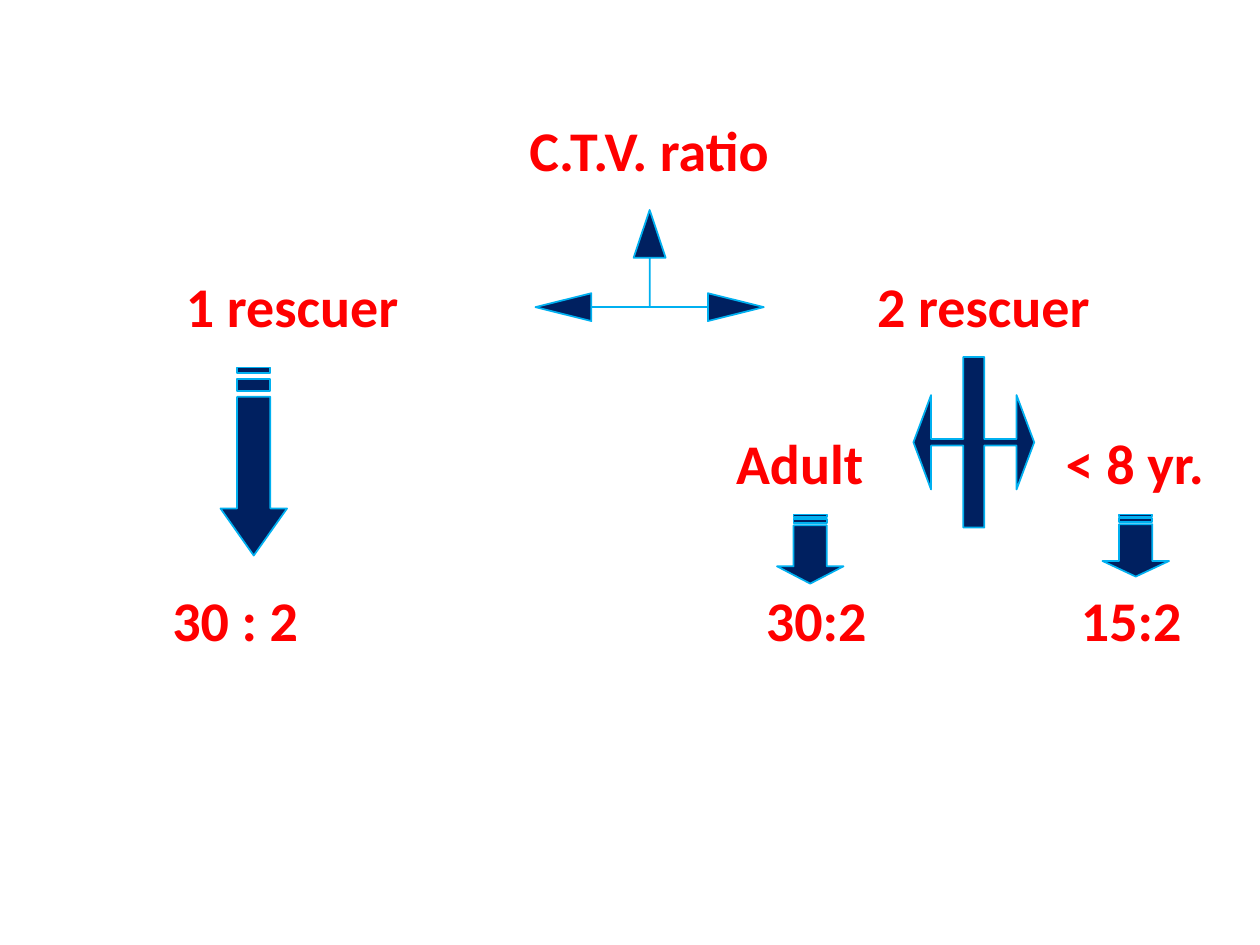
import pptx
import pptx.dml.color
import pptx.enum.shapes
import pptx.enum.text
import pptx.util

Pt = pptx.util.Pt
COLORS = {"text": "FF0000", "fill": "002060", "line": "00B0F0"}
LABEL_FORMAT = {"name": "Calibri", "size": Pt(32), "bold": True}
FIRST_ROW, ROW_PITCH = 85, 89.5
LABEL_HEIGHT = 40

# Each row holds (text, centre, width).
LABEL_ROWS = [
    [("C.T.V. ratio", 371, 180)],
    [("1 rescuer", 167, 160), ("2 rescuer", 562, 160)],
    [("Adult", 457, 100), ("< 8 yr.", 648.5, 100)],
    [("30 : 2", 134.5, 100), ("30:2", 466.5, 80), ("15:2", 646.5, 80)],
]
DOWN_ARROWS = [(126, 210, 38, 107.5), (444, 294, 38, 39.5), (630, 294, 38, 35.5)]


def color(name):
    return pptx.dml.color.RGBColor.from_string(COLORS[name])


def paint(shape):
    shape.shadow.inherit = False
    shape.fill.solid()
    shape.fill.fore_color.rgb = color("fill")
    shape.line.color.rgb = color("line")
    shape.line.width = Pt(1)


def add_label(page, text, center, middle, width):
    box = page.shapes.add_textbox(Pt(center - width / 2), Pt(middle - LABEL_HEIGHT / 2),
                                  Pt(width), Pt(LABEL_HEIGHT))
    frame = box.text_frame
    frame_format = {"margin_left": 0, "margin_right": 0, "margin_top": 0,
                    "margin_bottom": 0, "word_wrap": True,
                    "vertical_anchor": pptx.enum.text.MSO_ANCHOR.MIDDLE}
    for name, value in frame_format.items():
        setattr(frame, name, value)
    para = frame.paragraphs[0]
    para.alignment = pptx.enum.text.PP_ALIGN.CENTER
    span = para.add_run()
    span.text = text
    for name, value in LABEL_FORMAT.items():
        setattr(span.font, name, value)
    span.font.color.rgb = color("text")


def add_outline(page, contours):
    """Draw closed contours, given as lists of points, as one shape."""
    contours = [[(Pt(x), Pt(y)) for x, y in contour] for contour in contours]
    builder = page.shapes.build_freeform(*contours[0][0])
    for number, contour in enumerate(contours):
        if number:
            builder.move_to(*contour[0])
        builder.add_line_segments(contour[1:], close=True)
    paint(builder.convert_to_shape())


def add_striped_arrow(page, left, top, width, height):
    """Draw a down arrow with two stripes; stripes are 32nds of its height."""
    inner, outer = left + width / 4, left + width * 3 / 4
    neck, tip = top + height * 3 / 4, top + height
    body = top + height * 5 / 32
    contours = [[(left + width, neck), (outer, neck), (outer, body), (inner, body),
                 (inner, neck), (left, neck), (left + width / 2, tip)]]
    for start, end in [(2, 4), (0, 1)]:
        upper, lower = top + height * start / 32, top + height * end / 32
        contours.append([(outer, upper), (inner, upper), (inner, lower), (outer, lower)])
    add_outline(page, contours)


def add_three_way_arrow(page, left, top, width, height):
    """Draw thin stems with heads pointing up, left and right."""
    center, right = left + width / 2, left + width
    neck = top + height * 0.43
    half_up, half_side, side_head = width * 0.07, height * 0.125, width * 0.245
    axis = top + height - half_side
    left_neck, right_neck = left + side_head, right - side_head
    add_outline(page, [[
        (center, top), (center - half_up, neck), (center, neck), (center, axis),
        (left_neck, axis), (left_neck, axis - half_side), (left, axis),
        (left_neck, axis + half_side), (left_neck, axis),
        (right_neck, axis), (right_neck, axis + half_side), (right, axis),
        (right_neck, axis - half_side), (right_neck, axis),
        (center, axis), (center, neck), (center + half_up, neck)]])


def add_split_arrow(page, left, top, width, height):
    shape = page.shapes.add_shape(
        pptx.enum.shapes.MSO_SHAPE.LEFT_RIGHT_ARROW_CALLOUT,
        Pt(left), Pt(top), Pt(width), Pt(height))
    for number, value in enumerate([0.055, 0.391, 0.146, 0.174]):
        shape.adjustments[number] = value
    paint(shape)


def main():
    deck = pptx.Presentation()
    deck.slide_width, deck.slide_height = Pt(720), Pt(540)
    page = deck.slides.add_slide(deck.slide_layouts[6])
    for row, labels in enumerate(LABEL_ROWS):
        for text, center, width in labels:
            add_label(page, text, center, FIRST_ROW + row * ROW_PITCH, width)
    add_three_way_arrow(page, 306, 120, 130.5, 63.5)
    add_split_arrow(page, 522, 204, 69, 97.5)
    for arrow in DOWN_ARROWS:
        add_striped_arrow(page, *arrow)
    deck.save("out.pptx")


if __name__ == "__main__":
    main()
